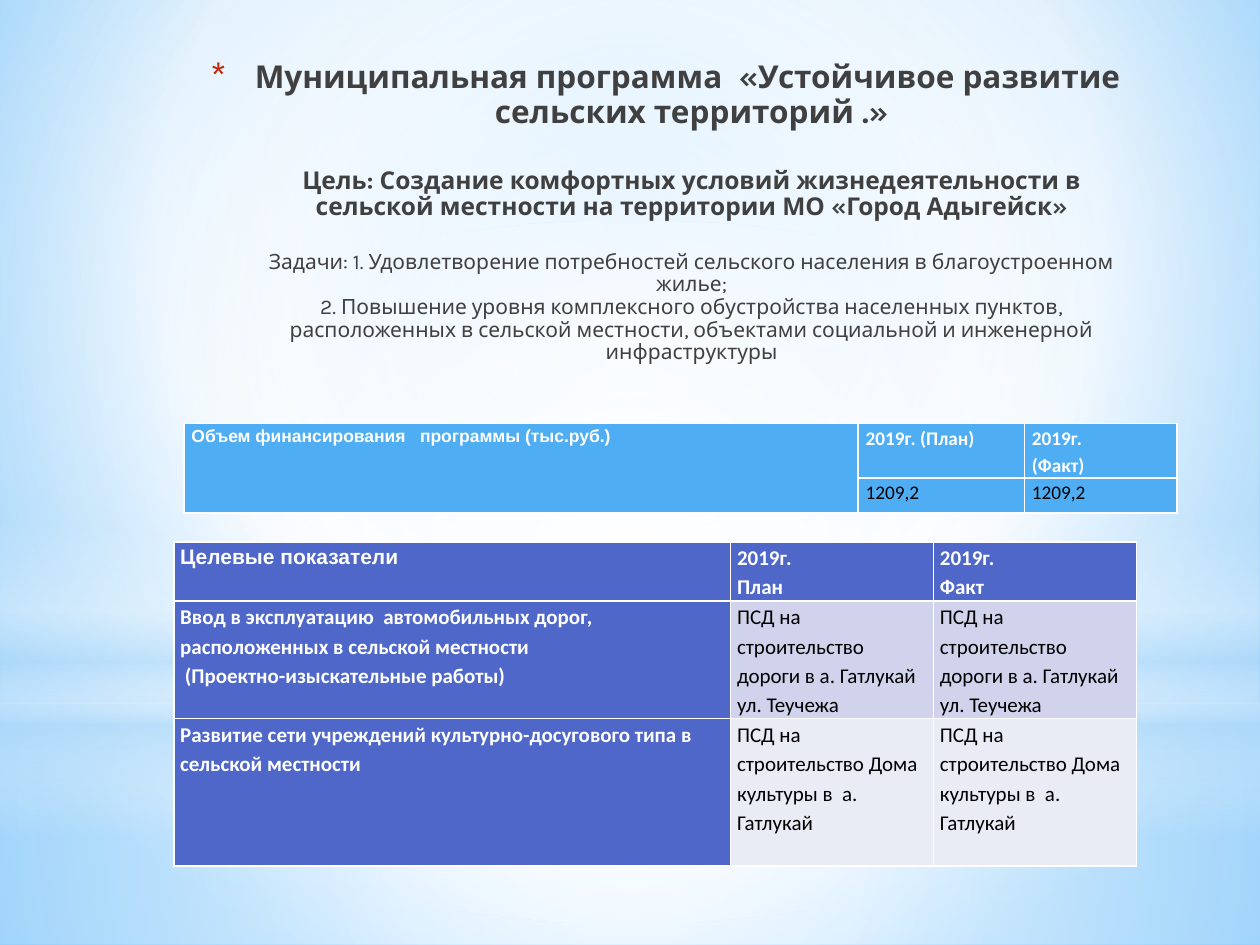
from dataclasses import dataclass
from typing import Optional

import pptx
import pptx.dml.color
import pptx.enum.shapes
import pptx.enum.text
import pptx.oxml
import pptx.oxml.ns
import pptx.util

RGB = pptx.dml.color.RGBColor
SHAPE = pptx.enum.shapes.MSO_SHAPE
ALIGN = pptx.enum.text.PP_ALIGN
Inches = pptx.util.Inches
Pt = pptx.util.Pt
qn = pptx.oxml.ns.qn

WIDTH, HEIGHT = Inches(10), Inches(7.5)
WHITE, BLACK = RGB(255, 255, 255), RGB(0, 0, 0)
DARK_GREY = RGB(0x40, 0x40, 0x40)
SKY, PALE_SKY = RGB(0x5B, 0xB9, 0xFF), RGB(0xB4, 0xDC, 0xFA)
LIGHT_SKY = RGB(0x9E, 0xD5, 0xFF)
RED = RGB(0xC3, 0x26, 0x0C)
AZURE, INDIGO = RGB(0x4F, 0xAD, 0xF3), RGB(0x4E, 0x67, 0xC8)
LILAC, PALE_LILAC = RGB(0xD0, 0xD3, 0xEB), RGB(0xE9, 0xEB, 0xF5)


@dataclass
class Gradient:
    """Stops are (position %, colour, opacity %); without focus it runs downwards."""
    stops: list[tuple[int, RGB, int]]
    focus: Optional[tuple[int, int, int, int]] = None


@dataclass
class Glow:
    kind: SHAPE
    top: float  # share of the slide's height
    height: float
    gradient: Gradient


@dataclass
class TitlePart:
    text: str
    size: int
    bold: bool
    gap: int = 0


@dataclass
class Cell:
    text: str
    fill: RGB
    color: RGB = WHITE
    bold: bool = True
    font: str = "Calibri"
    size: Optional[int] = None


@dataclass
class Grid:
    left: float
    top: float
    columns: list[float]
    rows: list[float]
    margin: float
    size: int
    cells: list[list[Optional[Cell]]]


CENTRE = (50, 50, 50, 50)
BACKGROUND = Gradient([(0, LIGHT_SKY, 100), (60, WHITE, 100), (100, SKY, 100)],
                      (20, 10, 20, 60))
GLOWS = [
    Glow(SHAPE.RECTANGLE, 0.744, 0.256, Gradient(
        [(0, WHITE, 91), (37, WHITE, 76), (100, PALE_SKY, 79)], CENTRE)),
    Glow(SHAPE.RECTANGLE, 0, 0.744, Gradient(
        [(0, WHITE, 89), (48, WHITE, 62), (100, PALE_SKY, 79)], CENTRE)),
    Glow(SHAPE.RECTANGLE, 0.55, 0.333, Gradient(
        [(0, WHITE, 0), (29, WHITE, 30), (45, PALE_SKY, 40),
         (55, WHITE, 26), (65, PALE_SKY, 60), (100, WHITE, 0)])),
    Glow(SHAPE.OVAL, 0.233, 0.744, Gradient(
        [(0, WHITE, 100), (56, WHITE, 0)], CENTRE)),
]
TITLE = [
    TitlePart("Муниципальная программа  «Устойчивое развитие  сельских территорий .»",
              18, True),
    TitlePart("Цель: Создание комфортных условий жизнедеятельности в сельской местности "
              "на территории МО «Город Адыгейск»", 14, True, 22),
    TitlePart("Задачи: 1. Удовлетворение потребностей сельского населения "
              "в благоустроенном жилье;", 12, False, 17),
    TitlePart("2. Повышение уровня комплексного обустройства населенных пунктов, "
              "расположенных в сельской местности, объектами социальной и инженерной "
              "инфраструктуры", 12, False),
]


def value_cells(text: str, fill: RGB) -> list[Cell]:
    """The same value for plan and fact."""
    return [Cell(text, fill, BLACK, False) for _ in range(2)]


FUNDING = Grid(1.46, 3.36, [5.35, 1.32, 1.21], [0.42, 0.28], 0.06, 11, [
    [Cell("Объем финансирования   программы (тыс.руб.)", AZURE, font="Arial", size=10),
     Cell("2019г. (План)", AZURE), Cell("2019г.\n(Факт)", AZURE)],
    [None, *value_cells("1209,2", AZURE)],
])
TARGETS = Grid(1.38, 4.3, [4.42, 1.61, 1.61], [0.47, 0.93, 1.17], 0.05, 12, [
    [Cell("Целевые показатели", INDIGO, font="Arial"),
     Cell("2019г.\nПлан", INDIGO), Cell("2019г.\nФакт", INDIGO)],
    [Cell("Ввод в эксплуатацию  автомобильных дорог, расположенных в сельской местности"
          "\n (Проектно-изыскательные работы)", INDIGO),
     *value_cells("ПСД на строительство дороги в а. Гатлукай ул. Теучежа", LILAC)],
    [Cell("Развитие сети учреждений культурно-досугового типа в сельской местности", INDIGO),
     *value_cells("ПСД на строительство Дома культуры в  а. Гатлукай", PALE_LILAC)],
])


def apply_gradient(fill, parent, gradient: Gradient) -> None:
    fill.gradient()
    stops = "".join(
        f'<a:gs pos="{pos * 1000}"><a:srgbClr val="{color}">'
        f'<a:alpha val="{alpha * 1000}"/></a:srgbClr></a:gs>'
        for pos, color, alpha in gradient.stops)
    if gradient.focus:
        sides = " ".join(f'{side}="{share * 1000}"'
                         for side, share in zip("ltrb", gradient.focus))
        shade = f'<a:path path="circle"><a:fillToRect {sides}/></a:path>'
    else:
        shade = '<a:lin ang="5400000" scaled="0"/>'
    old = parent.find(".//" + qn("a:gradFill"))
    old.getparent().replace(old, pptx.oxml.parse_xml(
        f'<a:gradFill xmlns:a="{pptx.oxml.ns.nsuri("a")}" rotWithShape="1">'
        f'<a:gsLst>{stops}</a:gsLst>{shade}</a:gradFill>'))


def add_glow(s, glow: Glow) -> None:
    sp = s.shapes.add_shape(glow.kind, 0, int(HEIGHT * glow.top),
                            WIDTH, int(HEIGHT * glow.height))
    sp.shadow.inherit = False
    sp.line.fill.background()
    apply_gradient(sp.fill, sp._element.spPr, glow.gradient)


def add_star_bullet(p) -> None:
    pPr = p._p.get_or_add_pPr()
    pPr.set("marL", str(Inches(0.35)))
    pPr.set("indent", str(-Inches(0.35)))
    color = pPr.makeelement(qn("a:buClr"), {})
    color.append(color.makeelement(qn("a:srgbClr"), {"val": str(RED)}))
    pPr.append(color)
    for tag, key, value in (("a:buSzPct", "val", "128000"),
                            ("a:buFont", "typeface", "Karla"),
                            ("a:buChar", "char", "*")):
        pPr.append(pPr.makeelement(qn(tag), {key: value}))


def format_title(title) -> None:
    title.left, title.top = Inches(1.54), Inches(0.44)
    title.width, title.height = Inches(7.55), Inches(1.02)
    tf = title.text_frame
    tf.word_wrap = True
    tf.auto_size = pptx.enum.text.MSO_AUTO_SIZE.NONE
    tf.vertical_anchor = pptx.enum.text.MSO_ANCHOR.TOP
    tf.text = "\n".join(part.text for part in TITLE)
    for p, part in zip(tf.paragraphs, TITLE):
        p.alignment = ALIGN.CENTER
        p.line_spacing = 0.9
        p.space_before = Pt(part.gap)
        p._p.get_or_add_pPr().set("marL", str(Inches(0.35)))
        font = p.runs[0].font
        font.name, font.size, font.bold = "Karla", Pt(part.size), part.bold
        font.color.rgb = DARK_GREY
    add_star_bullet(tf.paragraphs[0])


def fill_cell(target, cell: Cell, grid: Grid) -> None:
    target.fill.solid()
    target.fill.fore_color.rgb = cell.fill
    target.margin_left = target.margin_right = Inches(grid.margin)
    target.margin_top = target.margin_bottom = 0
    target.text_frame.text = cell.text
    for p in target.text_frame.paragraphs:
        p.line_spacing = 1.15
        font = p.runs[0].font
        font.name, font.size, font.bold = cell.font, Pt(cell.size or grid.size), cell.bold
        font.color.rgb = cell.color


def add_grid(s, grid: Grid):
    table = s.shapes.add_table(
        len(grid.rows), len(grid.columns), Inches(grid.left), Inches(grid.top),
        Inches(sum(grid.columns)), Inches(sum(grid.rows))).table
    for column, width in zip(table.columns, grid.columns):
        column.width = Inches(width)
    for row, height, cells in zip(table.rows, grid.rows, grid.cells):
        row.height = Inches(height)
        for target, cell in zip(row.cells, cells):
            if cell:
                fill_cell(target, cell, grid)
    return table


def main() -> None:
    prs = pptx.Presentation()
    prs.slide_width, prs.slide_height = WIDTH, HEIGHT
    s = prs.slides.add_slide(prs.slide_layouts[5])
    apply_gradient(s.background.fill, s._element, BACKGROUND)
    for glow in GLOWS:
        add_glow(s, glow)
    title = s.shapes.title
    s.shapes._spTree.append(title._element)  # in front of the glows
    format_title(title)
    funding = add_grid(s, FUNDING)
    funding.cell(0, 0).merge(funding.cell(1, 0))
    add_grid(s, TARGETS)
    prs.save("out.pptx")


if __name__ == "__main__":
    main()
